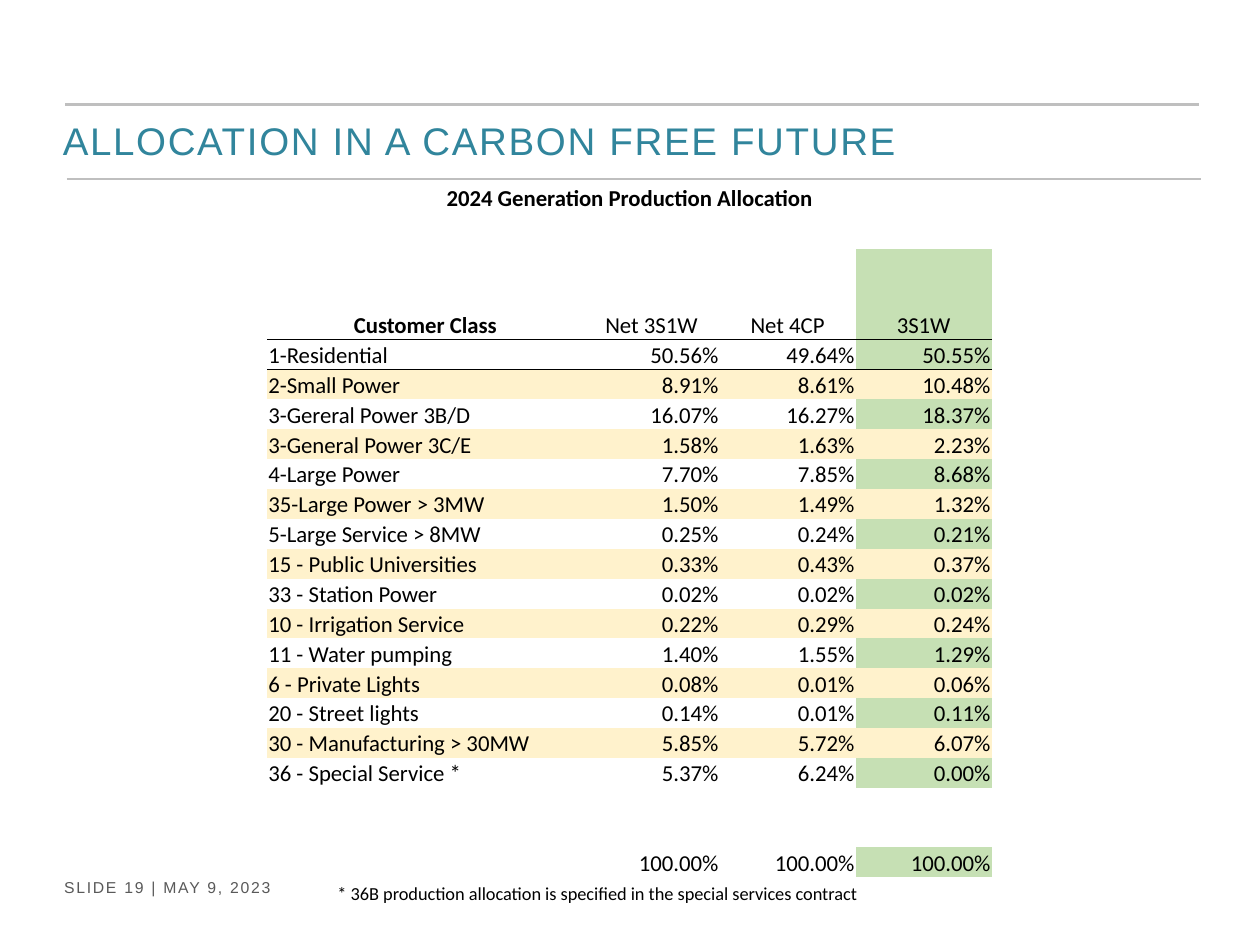
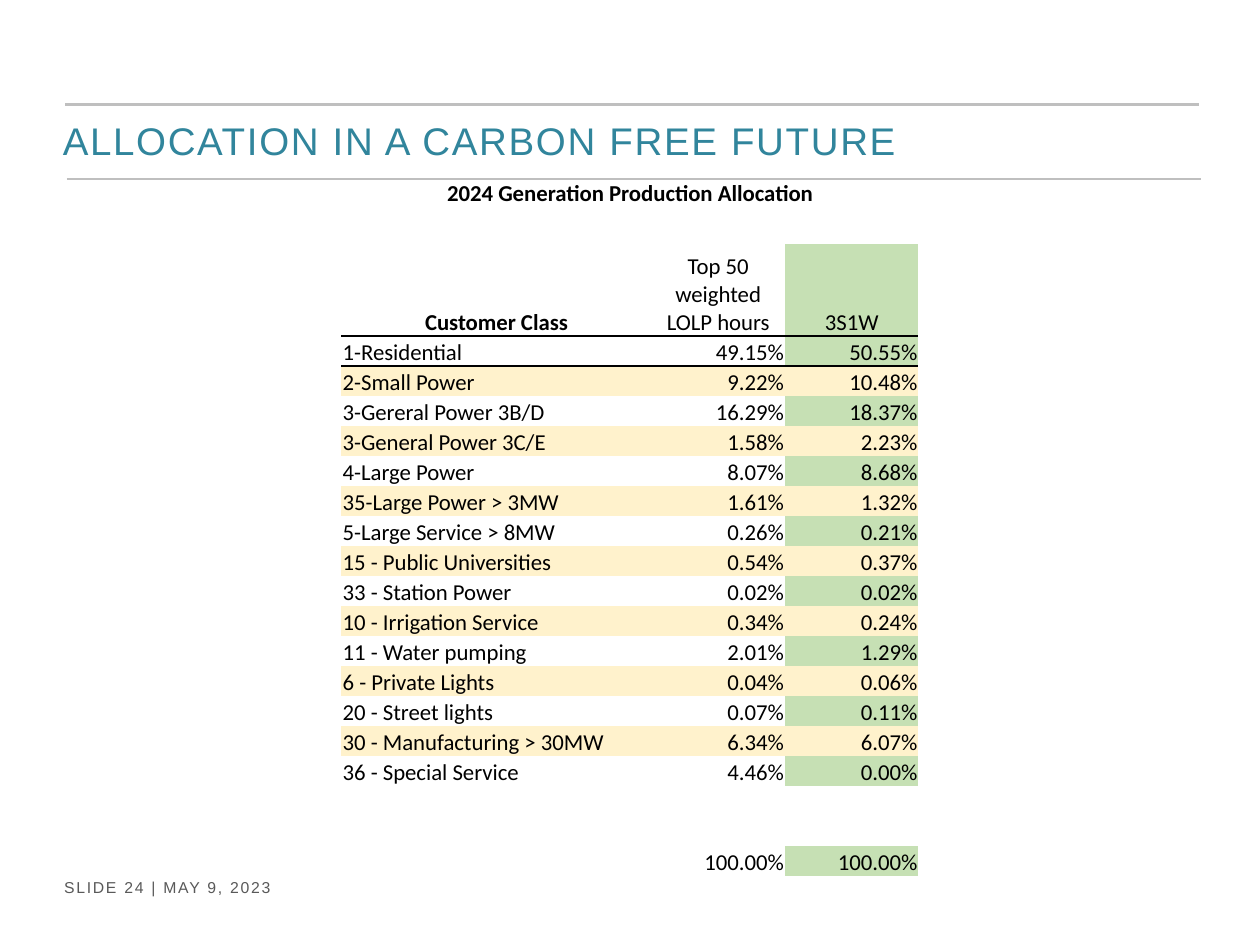
from collections import namedtuple

from lxml import etree
from pptx import Presentation
from pptx import util as u
from pptx.dml.color import RGBColor
from pptx.enum import shapes, text
from pptx.oxml import ns

COLORS = {
    "title": "31859C",
    "rule": "BFBFBF",
    "footer": "595959",
    "ink": "000000",
    "highlight": "C6E0B4",
    "band": "FFF2CC",
}
UNIT = u.Inches(0.1)
SLIDE_COLUMNS, SLIDE_ROWS = 100, 75
TABLE_SIZE = 13
TITLE_ROW = 3.2
NO_STYLE = "{2D5ABB26-0587-4C30-8999-92F81FD0307C}"
HEADING = "ALLOCATION IN A CARBON FREE FUTURE"
TABLE_TITLE = "2024 Generation Production Allocation"
CLASSES = [
    "1-Residential", "2-Small Power", "3-Gereral Power 3B/D",
    "3-General Power 3C/E", "4-Large Power", "35-Large Power > 3MW",
    "5-Large Service > 8MW", "15 - Public Universities", "33 - Station Power",
    "10 - Irrigation Service", "11 - Water pumping", "6 - Private Lights",
    "20 - Street lights", "30 - Manufacturing > 30MW", "36 - Special Service",
]
NET_3S1W = [50.56, 8.91, 16.07, 1.58, 7.70, 1.50, 0.25, 0.33, 0.02, 0.22,
            1.40, 0.08, 0.14, 5.85, 5.37]
NET_4CP = [49.64, 8.61, 16.27, 1.63, 7.85, 1.49, 0.24, 0.43, 0.02, 0.29,
           1.55, 0.01, 0.01, 5.72, 6.24]
LOLP_HOURS = [49.15, 9.22, 16.29, 1.58, 8.07, 1.61, 0.26, 0.54, 0.02, 0.34,
              2.01, 0.04, 0.07, 6.34, 4.46]
METHOD_3S1W = [50.55, 10.48, 18.37, 2.23, 8.68, 1.32, 0.21, 0.37, 0.02, 0.24,
               1.29, 0.06, 0.11, 6.07, 0.00]

Box = namedtuple("Box", "left top width height")
HEADER = Box(5.2, 8.3, 90, 5.9)
FOOTER = Box(4.1, 69.2, 26.8, 2.5)
NOTE = Box(25.8, 69.5, 44, 2.8)


def grid(count):
    """Turn grid columns or rows into a length."""
    return u.Emu(round(count * UNIT))


def color(name):
    """Look up a named colour."""
    return RGBColor.from_string(COLORS[name])


def format_runs(paragraph, size, font_name, color_name, bold=False, spacing=0):
    """Give every run of a paragraph the same font."""
    for run in paragraph.runs:
        run.font.size = u.Pt(size)
        run.font.name = font_name
        run.font.bold = bold
        run.font.color.rgb = color(color_name)
        if spacing:
            run.font._element.set("spc", str(spacing * 100))


def add_text(slide, box, words, size, font_name, color_name, spacing=0, wrap=True):
    """Place one line of text in a box and return its frame."""
    shape = slide.shapes.add_textbox(*map(grid, box))
    frame = shape.text_frame
    frame.text = words
    frame.word_wrap = wrap
    format_runs(frame.paragraphs[0], size, font_name, color_name, spacing=spacing)
    return frame


def add_rule(slide, left, top, width):
    """Draw a horizontal grey rule."""
    line = slide.shapes.add_connector(
        shapes.MSO_CONNECTOR.STRAIGHT,
        grid(left), grid(top), grid(left + width), grid(top))
    line.line.color.rgb = color("rule")
    line.line.width = u.Pt(1.5)
    etree.SubElement(line._element.spPr, ns.qn("a:effectLst"))


def add_header(slide, box):
    """Place the slide title between two rules."""
    add_rule(slide, box.left, box.top, box.width)
    add_rule(slide, box.left + 0.1, box.top + box.height, box.width)
    title_box = Box(box.left - 1.2, box.top - 0.1, box.width + 1, box.height - 0.1)
    frame = add_text(slide, title_box, HEADING, 22, "Arial", "title", spacing=1)
    frame.vertical_anchor = text.MSO_ANCHOR.MIDDLE


def add_footer(slide, box, number):
    """Place the slide number and date."""
    add_text(slide, box, f"SLIDE {number} | MAY 9, 2023", 9, "Arial", "footer", spacing=1)


def add_border(cell, side):
    """Draw a thin line on one side of a cell."""
    line = etree.Element(ns.qn(f"a:{side}"), w=str(u.Pt(1)))
    fill = etree.SubElement(line, ns.qn("a:solidFill"))
    etree.SubElement(fill, ns.qn("a:srgbClr"), val=COLORS["ink"])
    cell._tc.get_or_add_tcPr().insert(0, line)


def fill_cell(cell, words, align, fill_name=None, bold=False):
    """Write and format one table cell."""
    cell.margin_left = cell.margin_right = cell.margin_top = u.Inches(0.01)
    cell.margin_bottom = 0
    cell.vertical_anchor = text.MSO_ANCHOR.BOTTOM
    if fill_name:
        cell.fill.solid()
        cell.fill.fore_color.rgb = color(fill_name)
    else:
        cell.fill.background()
    paragraph = cell.text_frame.paragraphs[0]
    paragraph.alignment = align
    if words:
        paragraph.text = words
        format_runs(paragraph, TABLE_SIZE, "Calibri", "ink", bold)
    else:
        etree.SubElement(paragraph._p, ns.qn("a:endParaRPr"), sz=str(TABLE_SIZE * 100))


def allocation_rows(methods, mark):
    """List the table's rows, from its title to its totals."""
    blank = [""] * (len(methods) + 1)
    labels = CLASSES[:-1] + [CLASSES[-1] + mark]
    body = [[label] + [f"{value:.2f}%" for value in values]
            for label, *values in zip(labels, *methods.values())]
    return [[TABLE_TITLE] + blank[1:], blank, ["Customer Class", *methods],
            *body, blank, blank, [""] + ["100.00%"] * len(methods)]


def add_allocation_table(slide, box, value_width, header_row, methods, mark=""):
    """Place the allocation table, with its last column highlighted."""
    rows = allocation_rows(methods, mark)
    last = len(methods)
    table = slide.shapes.add_table(len(rows), last + 1, *map(grid, box)).table
    table.first_row = table.horz_banding = False
    table._tbl.tblPr.find(ns.qn("a:tableStyleId")).text = NO_STYLE

    table.columns[0].width = grid(box.width - last * value_width)
    for column in range(1, last + 1):
        table.columns[column].width = grid(value_width)
    plain_row = (box.height - TITLE_ROW - header_row) / (len(rows) - 2)
    special_rows = {0: TITLE_ROW, 2: header_row}

    for row, values in enumerate(rows):
        table.rows[row].height = grid(special_rows.get(row, plain_row))
        banded = 3 < row < 3 + len(CLASSES) and row % 2 == 0
        for column, words in enumerate(values):
            cell = table.cell(row, column)
            highlighted = column == last and row > 1 and words
            fill_name = "band" if banded else "highlight" if highlighted else None
            if row < 3:
                align = text.PP_ALIGN.CENTER
            else:
                align = text.PP_ALIGN.RIGHT if column else text.PP_ALIGN.LEFT
            fill_cell(cell, words, align, fill_name, bold=row < 3 and column == 0)
            if row in (2, 3):
                add_border(cell, "lnB" if row == 2 else "lnT")

    title_cell = table.cell(0, 0)
    title_cell.merge(table.cell(0, last))
    title_cell.margin_top = title_cell.margin_bottom = u.Inches(0.05)


def add_allocation_slide(presentation, number, box, value_width, header_row, methods, mark=""):
    """Add a slide with the shared header and footer and one table."""
    slide = presentation.slides.add_slide(presentation.slide_layouts[6])
    add_header(slide, HEADER)
    add_footer(slide, FOOTER, number)
    add_allocation_table(slide, box, value_width, header_row, methods, mark)
    return slide


def main():
    """Build and save the presentation."""
    presentation = Presentation()
    presentation.slide_width = grid(SLIDE_COLUMNS)
    presentation.slide_height = grid(SLIDE_ROWS)

    net_slide = add_allocation_slide(
        presentation, 19, Box(21.2, 14.2, 57.5, 55.5), 10.8, 7.2,
        {"Net 3S1W": NET_3S1W, "Net 4CP": NET_4CP, "3S1W": METHOD_3S1W}, mark=" *")
    add_text(net_slide, NOTE,
             "* 36B production allocation is specified in the special services contract",
             10.5, "Calibri", "ink", wrap=False)

    add_allocation_slide(
        presentation, 24, Box(27.1, 13.8, 45.8, 55.8), 10.6, 7.3,
        {"Top 50 weighted LOLP hours": LOLP_HOURS, "3S1W": METHOD_3S1W})
    presentation.save("out.pptx")


if __name__ == "__main__":
    main()
